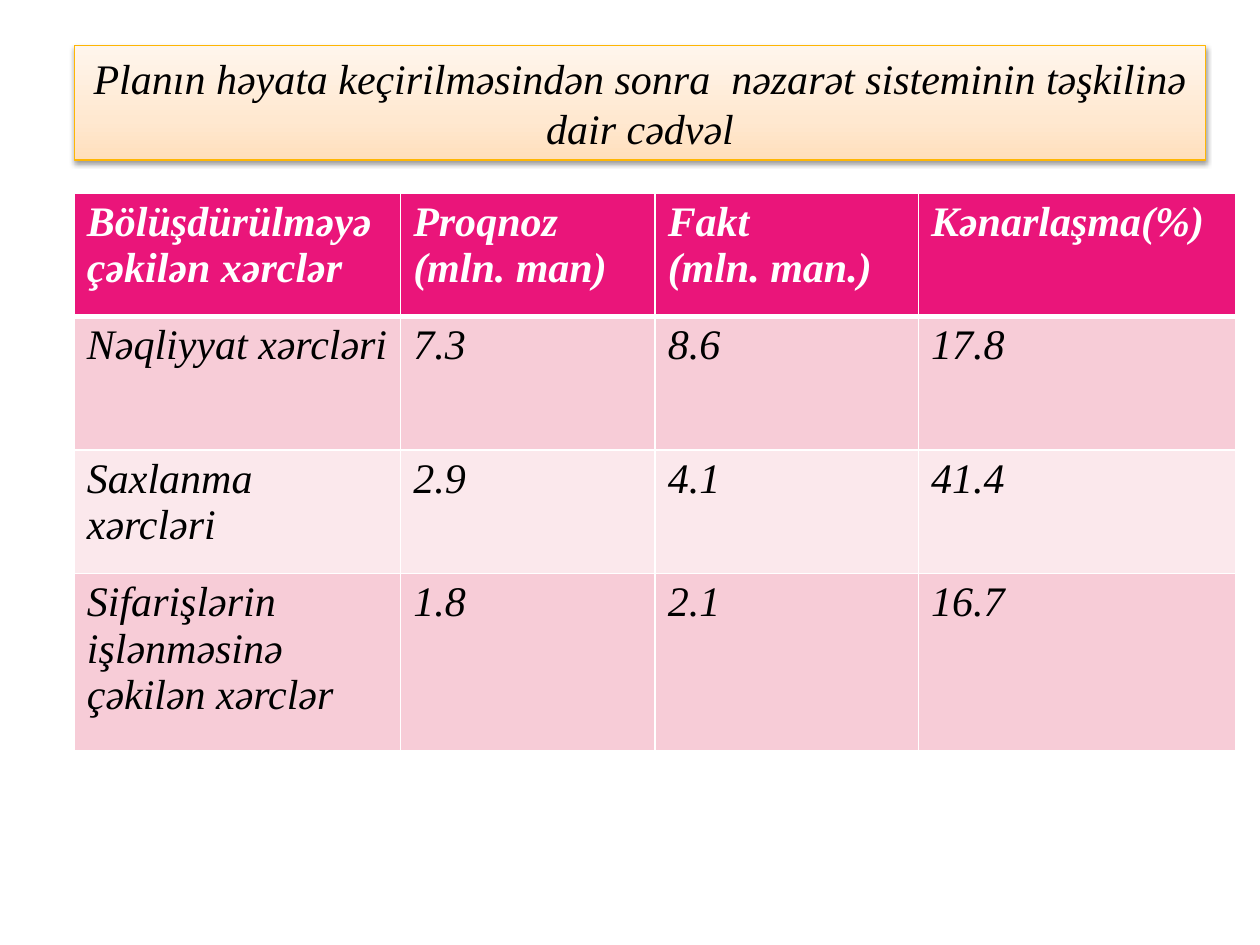
from dataclasses import dataclass

from lxml import etree
from pptx import Presentation
from pptx.dml.color import RGBColor
from pptx.enum import text
from pptx.oxml import parse_xml
from pptx.oxml.ns import nsdecls, qn
from pptx.util import Inches, Pt

FONT, SIZE = "Times New Roman", Pt(24)
WHITE = RGBColor(0xFF, 0xFF, 0xFF)
BLACK = RGBColor(0x00, 0x00, 0x00)
PINK = RGBColor(0xEA, 0x15, 0x7A)
ROSE = RGBColor(0xF7, 0xCC, 0xD7)
BLUSH = RGBColor(0xFB, 0xE8, 0xEC)
GOLD = RGBColor(0xFE, 0xB6, 0x04)
CREAM_STOPS = ((0, "FFDFBC"), (35, "FFE8D0"), (100, "FFF6ED"))

LEFT = 0.59
COLUMNS = (2.59, 2.02, 2.09, 2.52)


@dataclass(frozen=True)
class CostRow:
    height: float
    cells: tuple[str, ...]
    fill: RGBColor
    color: RGBColor = BLACK
    header: bool = False


HEADING = "Planın həyata keçirilməsindən sonra  nəzarət sisteminin təşkilinə dair cədvəl"
COSTS = (
    CostRow(0.98, ("Bölüşdürülməyə çəkilən xərclər", "Proqnoz\n(mln. man)",
                   "Fakt\n(mln. man.)", "Kənarlaşma(%)"), PINK, WHITE, True),
    CostRow(1.06, ("Nəqliyyat xərcləri", "7.3", "8.6", "17.8"), ROSE),
    CostRow(0.98, ("Saxlanma xərcləri", "2.9", "4.1", "41.4"), BLUSH),
    CostRow(1.41, ("Sifarişlərin işlənməsinə çəkilən xərclər", "1.8", "2.1", "16.7"), ROSE),
)


def write(frame, content: str, color: RGBColor, bold: bool = False, align=None) -> None:
    """Fill a text frame, one paragraph per line of content."""
    for i, line in enumerate(content.split("\n")):
        paragraph = frame.add_paragraph() if i else frame.paragraphs[0]
        paragraph.alignment = align
        run = paragraph.add_run()
        run.text = line
        run.font.name, run.font.size = FONT, SIZE
        run.font.bold, run.font.italic = bold, True
        run.font.color.rgb = color


def border_cell(cell, bottom: float) -> None:
    """Draw white cell borders; widths are in points."""
    properties = cell._tc.get_or_add_tcPr()
    widths = {"lnL": 1, "lnR": 1, "lnT": 1, "lnB": bottom}
    for position, (side, width) in enumerate(widths.items()):
        line = etree.Element(qn(f"a:{side}"), w=str(Pt(width)))
        fill = etree.SubElement(line, qn("a:solidFill"))
        etree.SubElement(fill, qn("a:srgbClr"), val=str(WHITE))
        properties.insert(position, line)


def add_heading(slide) -> None:
    heading = slide.shapes.title
    heading.left, heading.top = Inches(LEFT), Inches(0.36)
    heading.width, heading.height = Inches(8.98), Inches(0.91)
    heading.line.color.rgb, heading.line.width = GOLD, Pt(0.75)
    # Three-stop gradient and soft shadow
    stops = "".join(f'<a:gs pos="{share * 1000}"><a:srgbClr val="{color}"/></a:gs>'
                    for share, color in CREAM_STOPS)
    gradient = parse_xml(f'<a:gradFill {nsdecls("a")} rotWithShape="1"><a:gsLst>{stops}</a:gsLst>'
                         '<a:lin ang="16200000" scaled="0"/></a:gradFill>')
    shadow = parse_xml(f'<a:effectLst {nsdecls("a")}><a:outerShdw blurRad="{Pt(3.1)}" '
                       f'dist="{Pt(1.6)}" dir="5400000" rotWithShape="0"><a:srgbClr val="{BLACK}">'
                       '<a:alpha val="38000"/></a:srgbClr></a:outerShdw></a:effectLst>')
    outline = heading.line._ln
    outline.addprevious(gradient)
    outline.addnext(shadow)
    # Heading text
    frame = heading.text_frame
    frame.word_wrap = True
    frame.auto_size = text.MSO_AUTO_SIZE.NONE
    frame.vertical_anchor = text.MSO_ANCHOR.MIDDLE
    write(frame, HEADING, BLACK, align=text.PP_ALIGN.CENTER)


def add_cost_table(slide) -> None:
    table = slide.shapes.add_table(
        len(COSTS), len(COLUMNS), Inches(LEFT), Inches(1.53),
        Inches(sum(COLUMNS)), Inches(sum(cost.height for cost in COSTS))).table
    for column, width in zip(table.columns, COLUMNS):
        column.width = Inches(width)
    for row, cost in zip(table.rows, COSTS):
        row.height = Inches(cost.height)
        for cell, content in zip(row.cells, cost.cells):
            cell.fill.solid()
            cell.fill.fore_color.rgb = cost.fill
            border_cell(cell, 3 if cost.header else 1)
            write(cell.text_frame, content, cost.color, cost.header)


def main() -> None:
    deck = Presentation()
    deck.slide_width, deck.slide_height = Inches(10), Inches(7.5)
    slide = deck.slides.add_slide(deck.slide_layouts.get_by_name("Title Only"))
    add_cost_table(slide)
    add_heading(slide)
    deck.save("out.pptx")


if __name__ == "__main__":
    main()
